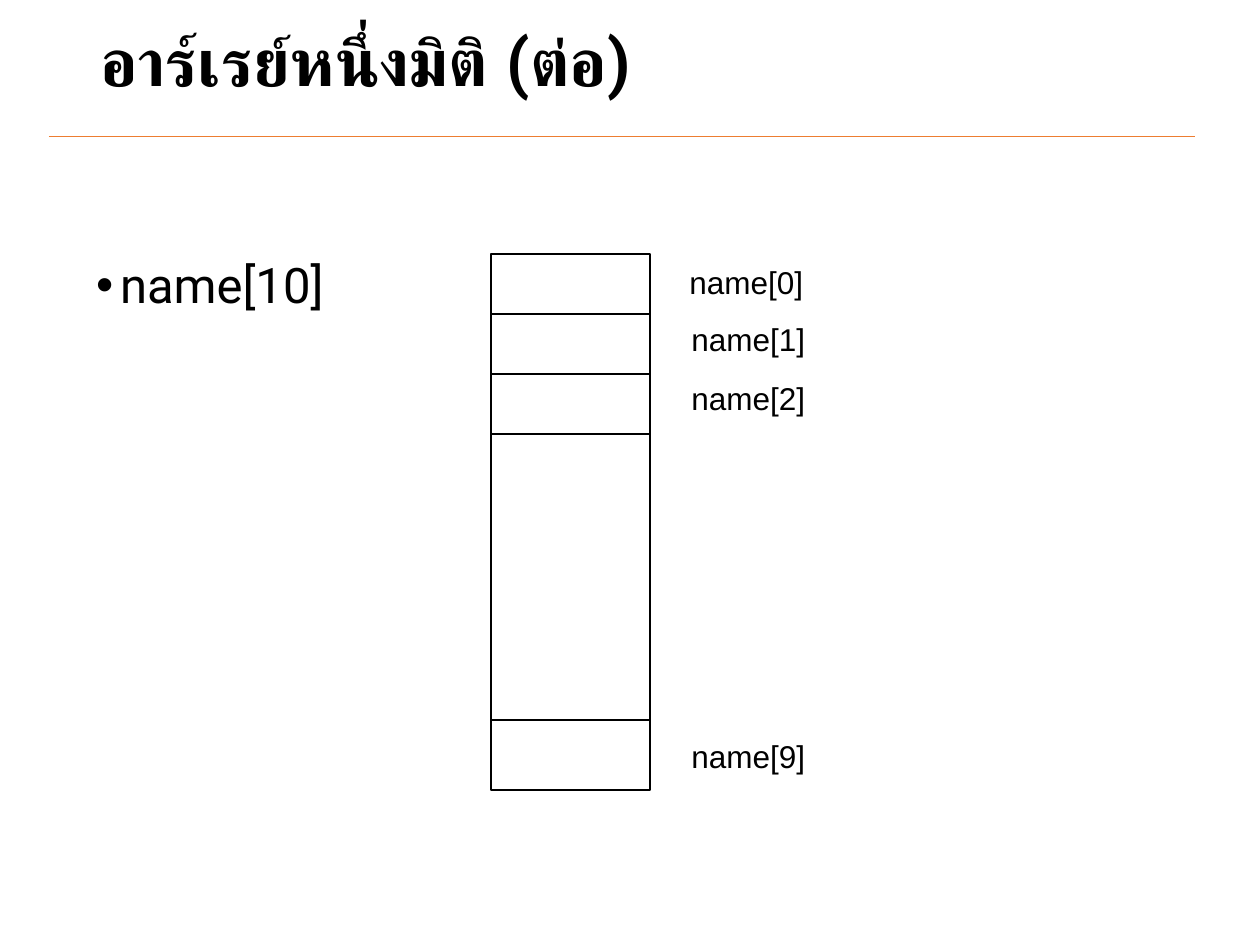
from pptx import Presentation
from pptx.dml.color import RGBColor
from pptx.enum.shapes import MSO_CONNECTOR, MSO_SHAPE
from pptx.enum.text import MSO_ANCHOR
from pptx.oxml.ns import qn
from pptx.util import Pt
from lxml.etree import SubElement

PX = 914400 // 126
BLACK = RGBColor(0x00, 0x00, 0x00)
ORANGE = RGBColor(0xED, 0x7D, 0x31)

deck = Presentation()
deck.slide_width, deck.slide_height = 1260 * PX, 945 * PX
slide = deck.slides.add_slide(deck.slide_layouts[6])


def add_text(text, box, font_format, frame_format):
    """Add a one-paragraph text box and return its paragraph."""
    frame = slide.shapes.add_textbox(*[n * PX for n in box]).text_frame
    for key, value in frame_format.items():
        setattr(frame, key, value)
    paragraph = frame.paragraphs[0]
    run = paragraph.add_run()
    run.text = text
    for key, value in font_format.items():
        setattr(run.font, key, value)
    run.font.color.rgb = BLACK
    return paragraph


def add_rule(shapes, left, right, y, color, width):
    """Add a horizontal line without a shadow."""
    rule = shapes.add_connector(
        MSO_CONNECTOR.STRAIGHT, left * PX, y * PX, right * PX, y * PX)
    rule.line.color.rgb = color
    rule.line.width = Pt(width)
    SubElement(rule._element.spPr, qn("a:effectLst"))


# Heading
add_rule(slide.shapes, 49, 1195, 136, ORANGE, 0.5)
title = add_text("อาร์เรย์หนึ่งมิติ (ต่อ)", (88, 18, 1086, 94),
                 {"name": "Roboto", "size": Pt(38), "bold": True},
                 {"word_wrap": True, "vertical_anchor": MSO_ANCHOR.MIDDLE})
title.line_spacing = 0.9

# Declaration bullet
declaration = add_text("name[10]", (54, 159, 1142, 731),
                       {"name": "Roboto", "size": Pt(28)},
                       {"word_wrap": True, "margin_left": 42 * PX,
                        "margin_top": 102 * PX})
declaration.line_spacing = 0.9
properties = declaration._p.get_or_add_pPr()
properties.set("marL", str(24 * PX))
properties.set("indent", str(-24 * PX))
SubElement(properties, qn("a:buFont"), typeface="Arial")
SubElement(properties, qn("a:buChar"), char="•")

# Memory cells
ARRAY_LEFT, ARRAY_TOP, ARRAY_WIDTH, ARRAY_HEIGHT = 491, 254, 159, 536
CELL_HEIGHT = 60
array = slide.shapes.add_group_shape()
outline = array.shapes.add_shape(
    MSO_SHAPE.RECTANGLE, ARRAY_LEFT * PX, ARRAY_TOP * PX,
    ARRAY_WIDTH * PX, ARRAY_HEIGHT * PX)
outline.shadow.inherit = False
outline.fill.background()
outline.line.color.rgb = BLACK
outline.line.width = Pt(0.75)
dividers = [ARRAY_TOP + CELL_HEIGHT * row for row in (1, 2, 3)] + [720]
for y in dividers:
    add_rule(array.shapes, ARRAY_LEFT, ARRAY_LEFT + ARRAY_WIDTH, y, BLACK, 0.75)

# Element names
for index, left, top in ((0, 677, 257), (1, 679, 314), (2, 679, 373), (9, 679, 731)):
    add_text(f"name[{index}]", (left, top, 139, 50),
             {"name": "Arial", "size": Pt(18)}, {"word_wrap": False})

deck.save("out.pptx")
